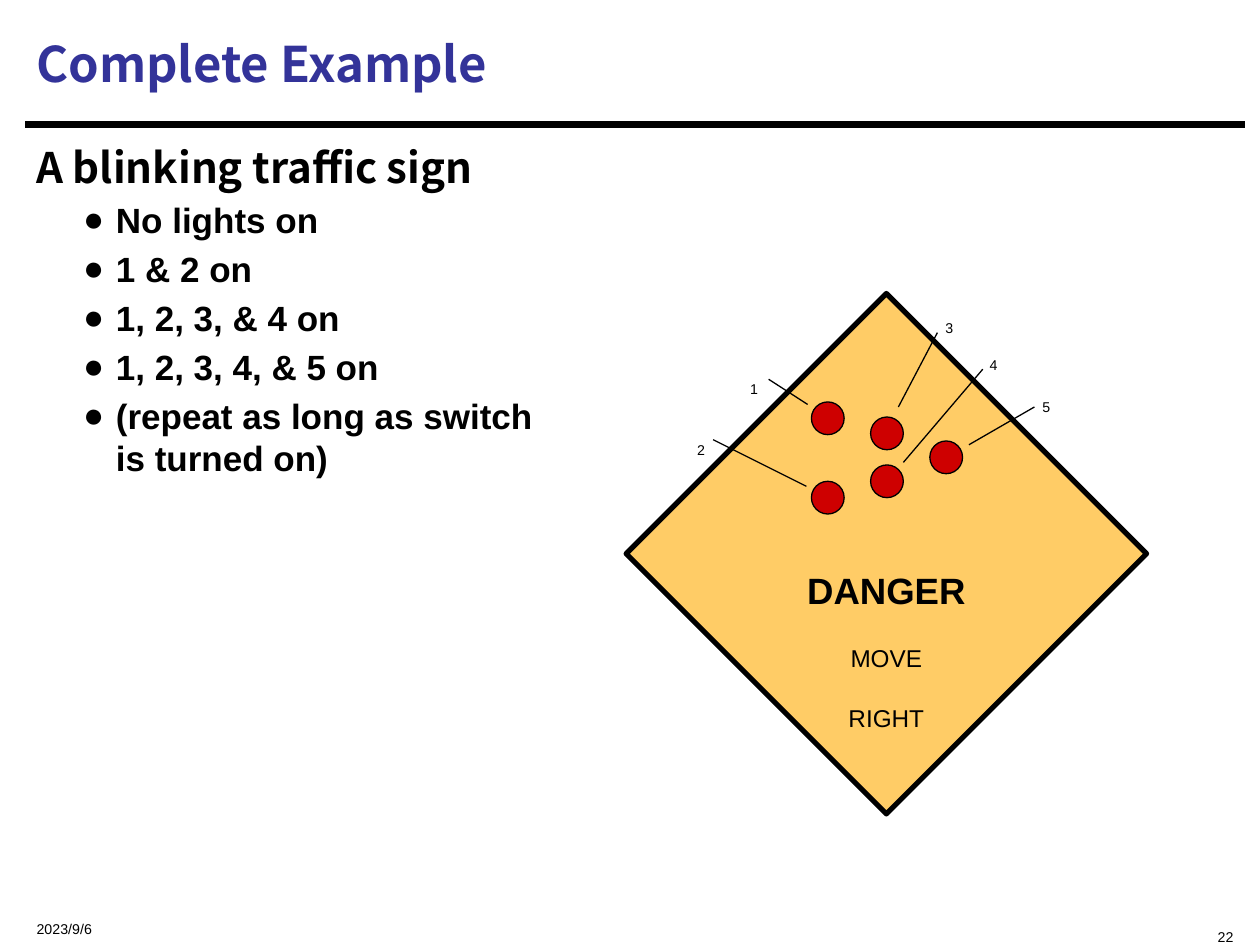
from dataclasses import dataclass
from typing import NamedTuple

from lxml import etree
from pptx import Presentation
from pptx import util as u
from pptx.dml.color import RGBColor
from pptx.enum import shapes, text
from pptx.oxml import ns

EMU_PER_PX = 9144  # 100 px to the inch


@dataclass(frozen=True)
class Theme:
    heading_font: str = "Noto Sans CJK SC"
    body_font: str = "Arial"
    ink: str = "000000"
    title: str = "333399"
    sign: str = "FFCC66"
    lamp: str = "CE0000"
    title_size: int = 28
    heading_size: int = 24
    bullet_size: int = 20
    danger_size: int = 36
    move_size: int = 24
    small_size: int = 14
    thin: float = 0.75
    sign_line: float = 3
    rule_line: float = 3.75


class Box(NamedTuple):
    left: int
    top: int
    width: int
    height: int


class Segment(NamedTuple):
    x1: int
    y1: int
    x2: int
    y2: int


class Lamp(NamedTuple):
    number: str
    left: int
    top: int
    label_left: int
    label_top: int
    leader: Segment


THEME = Theme()
LAMP_SIZE = 26
SUBSCRIPT = "-33000"
BULLETS = [
    "No lights on",
    "1 & 2 on",
    "1, 2, 3, & 4 on",
    "1, 2, 3, 4, & 5 on",
    "(repeat as long as switch\vis turned on)",
]
LAMPS = [
    Lamp("1", 644, 319, 583, 282, Segment(610, 301, 641, 321)),
    Lamp("2", 644, 382, 541, 331, Segment(566, 349, 640, 386)),
    Lamp("3", 691, 331, 738, 234, Segment(744, 264, 713, 323)),
    Lamp("4", 691, 369, 773, 263, Segment(780, 293, 717, 367)),
    Lamp("5", 738, 350, 815, 297, Segment(821, 323, 769, 353)),
]


def px(value: int) -> u.Emu:
    return u.Emu(value * EMU_PER_PX)


def style(font, size: int, bold: bool = False, name: str = THEME.body_font,
          color: str = THEME.ink) -> None:
    font.name, font.size, font.bold = name, u.Pt(size), bold
    font.color.rgb = RGBColor.from_string(color)


def add_frame(slide, box: Box, anchor=text.MSO_ANCHOR.TOP, grow: bool = False):
    shape = slide.shapes.add_textbox(*map(px, box))
    frame = shape.text_frame
    frame.word_wrap = not grow
    frame.vertical_anchor = anchor
    frame.margin_left = frame.margin_right = px(9)
    frame.margin_top = frame.margin_bottom = px(5)
    if grow:
        frame.auto_size = text.MSO_AUTO_SIZE.SHAPE_TO_FIT_TEXT
    return shape


def lower_text(shape) -> None:
    """Set all text of the shape as subscript."""
    for tag in ("a:defRPr", "a:rPr"):
        for properties in shape.element.iter(ns.qn(tag)):
            properties.set("baseline", SUBSCRIPT)


def add_small_text(slide, box: Box, words: str, align=text.PP_ALIGN.LEFT,
                   anchor=text.MSO_ANCHOR.TOP, grow: bool = False) -> None:
    shape = add_frame(slide, box, anchor, grow)
    paragraph = shape.text_frame.paragraphs[0]
    paragraph.text, paragraph.alignment = words, align
    style(paragraph.font, THEME.small_size)
    lower_text(shape)


def add_line(slide, segment: Segment, width: float) -> None:
    line = slide.shapes.add_connector(shapes.MSO_CONNECTOR.STRAIGHT, *map(px, segment))
    line.line.color.rgb = RGBColor.from_string(THEME.ink)
    line.line.width = u.Pt(width)
    etree.SubElement(line.element.spPr, ns.qn("a:effectLst"))


def add_filled(slide, kind, box: Box, fill: str, width: float) -> None:
    shape = slide.shapes.add_shape(kind, *map(px, box))
    shape.shadow.inherit = False
    shape.fill.solid()
    shape.fill.fore_color.rgb = RGBColor.from_string(fill)
    shape.line.color.rgb = RGBColor.from_string(THEME.ink)
    shape.line.width = u.Pt(width)


def add_bullet(frame, words: str) -> None:
    paragraph = frame.add_paragraph()
    paragraph.text, paragraph.level = words, 1
    paragraph.space_before = u.Pt(4)
    style(paragraph.font, THEME.bullet_size, bold=True)
    properties = paragraph.font._element.getparent()
    properties.set("marL", str(px(63)))
    properties.set("indent", str(px(-26)))
    bullet_font = etree.Element(ns.qn("a:buFont"), typeface=THEME.body_font)
    bullet = etree.Element(ns.qn("a:buChar"), char="●")
    for element in (bullet_font, bullet):
        properties.find(ns.qn("a:defRPr")).addprevious(element)


def add_headings(slide) -> None:
    title = add_frame(slide, Box(20, 8, 967, 84), text.MSO_ANCHOR.MIDDLE)
    paragraph = title.text_frame.paragraphs[0]
    paragraph.text = "Complete Example"
    style(paragraph.font, THEME.title_size, True, THEME.heading_font, THEME.title)

    body = add_frame(slide, Box(20, 107, 967, 599)).text_frame
    body.paragraphs[0].text = "A blinking traffic sign"
    style(body.paragraphs[0].font, THEME.heading_size, True, THEME.heading_font)
    for words in BULLETS:
        add_bullet(body, words)


def add_sign(slide) -> None:
    add_filled(slide, shapes.MSO_SHAPE.DIAMOND, Box(497, 233, 413, 413),
               THEME.sign, THEME.sign_line)
    warning = add_frame(slide, Box(585, 408, 237, 150), grow=True)
    paragraph = warning.text_frame.paragraphs[0]
    paragraph.alignment = text.PP_ALIGN.CENTER
    lines = [("DANGER", THEME.danger_size, True),
             ("MOVE", THEME.move_size, False),
             ("RIGHT", THEME.move_size, False)]
    for index, (words, size, bold) in enumerate(lines):
        if index:
            paragraph.add_line_break()
        run = paragraph.add_run()
        run.text = words
        style(run.font, size, bold)
    lower_text(warning)


def add_lamp(slide, lamp: Lamp) -> None:
    add_filled(slide, shapes.MSO_SHAPE.OVAL,
               Box(lamp.left, lamp.top, LAMP_SIZE, LAMP_SIZE), THEME.lamp, THEME.thin)
    add_small_text(slide, Box(lamp.label_left, lamp.label_top, 31, 33), lamp.number,
                   text.PP_ALIGN.CENTER, grow=True)
    add_line(slide, lamp.leader, THEME.thin)


def main() -> None:
    presentation = Presentation()
    presentation.slide_width, presentation.slide_height = px(1000), px(750)
    slide = presentation.slides.add_slide(presentation.slide_layouts[6])

    # Rule and footer
    add_line(slide, Segment(20, 99, 988, 99), THEME.rule_line)
    add_small_text(slide, Box(20, 717, 250, 25), "2023/9/6", anchor=text.MSO_ANCHOR.MIDDLE)
    add_small_text(slide, Box(688, 717, 300, 25), "22", text.PP_ALIGN.RIGHT)

    # Title and list
    add_headings(slide)

    # Traffic sign with numbered lamps
    add_sign(slide)
    for lamp in LAMPS:
        add_lamp(slide, lamp)

    presentation.save("out.pptx")


if __name__ == "__main__":
    main()
